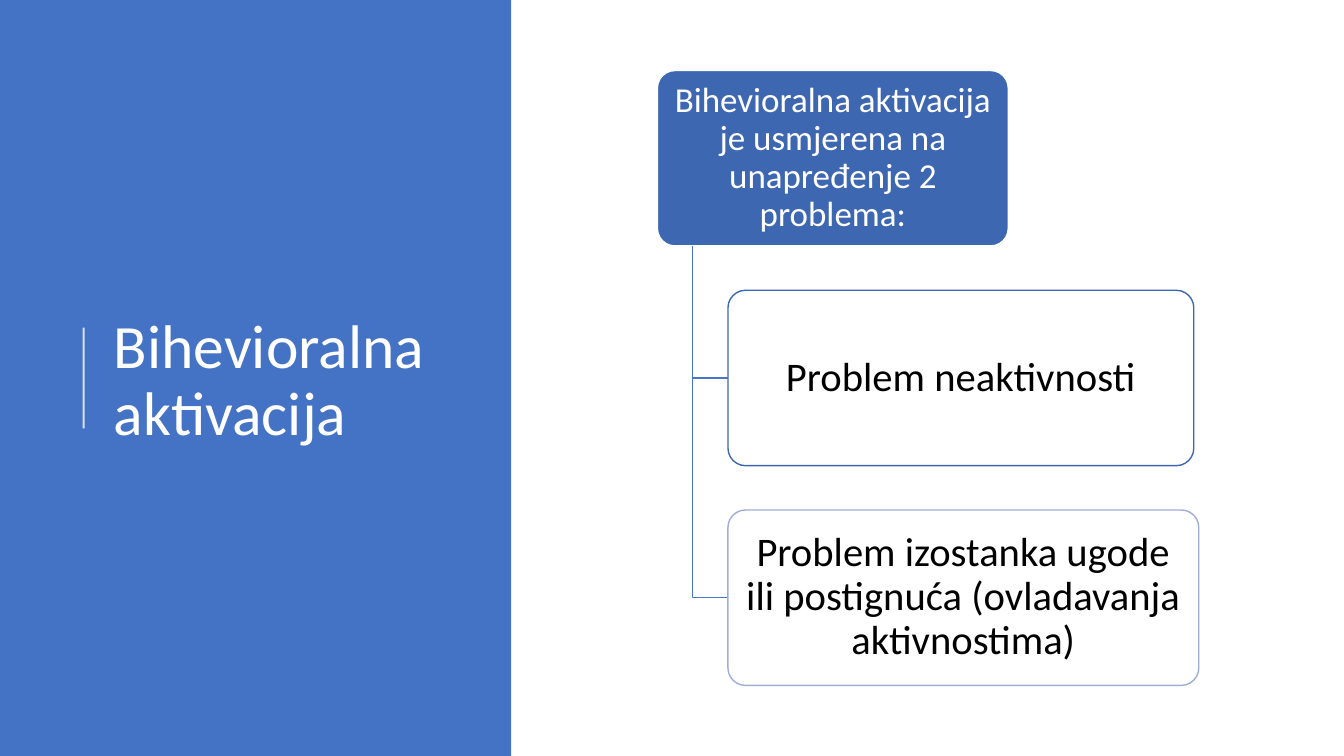
from dataclasses import dataclass

from lxml.etree import SubElement
from pptx import Presentation
from pptx.dml.color import RGBColor
from pptx.enum.shapes import MSO_CONNECTOR, MSO_SHAPE
from pptx.enum.text import MSO_ANCHOR, MSO_AUTO_SIZE, PP_ALIGN
from pptx.oxml.ns import qn
from pptx.slide import Slide
from pptx.util import Inches, Pt

WHITE = RGBColor(0xFF, 0xFF, 0xFF)
BLACK = RGBColor(0x00, 0x00, 0x00)
PANEL_BLUE = RGBColor(0x44, 0x72, 0xC4)
BOX_BLUE = RGBColor(0x3E, 0x67, 0xB2)
BRANCH_BLUE = RGBColor(0x4A, 0x75, 0xC5)
PALE_BLUE = RGBColor(0x9F, 0xAE, 0xD8)

BOX_TOP, BOX_HEIGHT, BOX_STEP = 0.7, 1.74, 2.18
TRUNK_X, PROBLEM_X = 6.87, 7.22


@dataclass
class Box:
    text: str
    left: float
    width: float
    fill: RGBColor
    border: RGBColor
    color: RGBColor
    size: int
    margins: tuple[float, float]
    opacity: int = 100


GOAL = Box("Bihevioralna aktivacija je usmjerena na unapređenje 2 problema:",
           6.52, 3.48, BOX_BLUE, WHITE, WHITE, 25, (0.05, 0.03))
PROBLEMS = [
    Box("Problem neaktivnosti", PROBLEM_X, 4.62,
        WHITE, BOX_BLUE, BLACK, 29, (0.06, 0.04), 90),
    Box("Problem izostanka ugode ili postignuća (ovladavanja aktivnostima)",
        PROBLEM_X, 4.67, WHITE, PALE_BLUE, BLACK, 29, (0.06, 0.04), 90),
]


def set_opacity(fill_parent, percent: int) -> None:
    color = fill_parent.find(qn("a:solidFill"))[0]
    SubElement(color, qn("a:alpha"), val=str(percent * 1000))


def format_text(frame, text: str, size: int, color: RGBColor, align: PP_ALIGN,
                margins: tuple[float, float]) -> None:
    side, edge = Inches(margins[0]), Inches(margins[1])
    frame.text = text
    paragraph = frame.paragraphs[0]
    formats = {
        frame: {"word_wrap": True, "auto_size": MSO_AUTO_SIZE.NONE,
                "vertical_anchor": MSO_ANCHOR.MIDDLE,
                "margin_left": side, "margin_right": side,
                "margin_top": edge, "margin_bottom": edge},
        paragraph: {"alignment": align, "line_spacing": 0.9},
        paragraph.font: {"name": "Calibri", "size": Pt(size)},
    }
    for target, values in formats.items():
        for name, value in values.items():
            setattr(target, name, value)
    paragraph.font.color.rgb = color


def draw_box(slide: Slide, box: Box, top: float) -> None:
    shape = slide.shapes.add_shape(
        MSO_SHAPE.ROUNDED_RECTANGLE, Inches(box.left), Inches(top),
        Inches(box.width), Inches(BOX_HEIGHT))
    shape.adjustments[0] = 0.1
    shape.shadow.inherit = False
    shape.fill.solid()
    shape.fill.fore_color.rgb = box.fill
    if box.opacity < 100:
        set_opacity(shape.element.spPr, box.opacity)
    shape.line.color.rgb = box.border
    shape.line.width = Pt(1)
    format_text(shape.text_frame, box.text, box.size, box.color,
                PP_ALIGN.CENTER, box.margins)


def draw_branch(slide: Slide, end_y: float) -> None:
    start_y = BOX_TOP + BOX_HEIGHT
    builder = slide.shapes.build_freeform(Inches(TRUNK_X), Inches(start_y))
    builder.add_line_segments(
        [(Inches(TRUNK_X), Inches(end_y)), (Inches(PROBLEM_X), Inches(end_y))],
        close=False)
    branch = builder.convert_to_shape()
    branch.shadow.inherit = False
    branch.fill.background()
    branch.line.color.rgb = BRANCH_BLUE
    branch.line.width = Pt(1)


def draw_title_side(slide: Slide, height: int) -> None:
    # Blue panel
    panel = slide.shapes.add_shape(MSO_SHAPE.RECTANGLE, 0, 0, Inches(5.07), height)
    panel.shadow.inherit = False
    panel.fill.solid()
    panel.fill.fore_color.rgb = PANEL_BLUE
    panel.line.fill.background()

    # Accent line
    accent = slide.shapes.add_connector(
        MSO_CONNECTOR.STRAIGHT, Inches(0.83), Inches(4.25), Inches(0.83), Inches(3.25))
    accent.line.color.rgb = WHITE
    accent.line.width = Pt(1.5)
    set_opacity(accent.line._get_or_add_ln(), 80)
    SubElement(accent.element.spPr, qn("a:effectLst"))

    # Title, brought in front of the panel
    title = slide.shapes.title
    title.left, title.top = Inches(1.03), Inches(0.78)
    title.width, title.height = Inches(3.69), Inches(6.02)
    format_text(title.text_frame, "Bihevioralna aktivacija", 44, WHITE,
                PP_ALIGN.LEFT, (0.1, 0.05))
    accent.element.addnext(title.element)


def main() -> None:
    deck = Presentation()
    deck.slide_width, deck.slide_height = Inches(13.33), Inches(7.5)
    slide = deck.slides.add_slide(deck.slide_layouts.get_by_name("Title Only"))
    draw_title_side(slide, deck.slide_height)

    # Hierarchy of the goal and its problems
    draw_box(slide, GOAL, BOX_TOP)
    for row, problem in enumerate(PROBLEMS, start=1):
        top = BOX_TOP + row * BOX_STEP
        draw_branch(slide, top + BOX_HEIGHT / 2)
        draw_box(slide, problem, top)

    deck.save("out.pptx")


if __name__ == "__main__":
    main()
